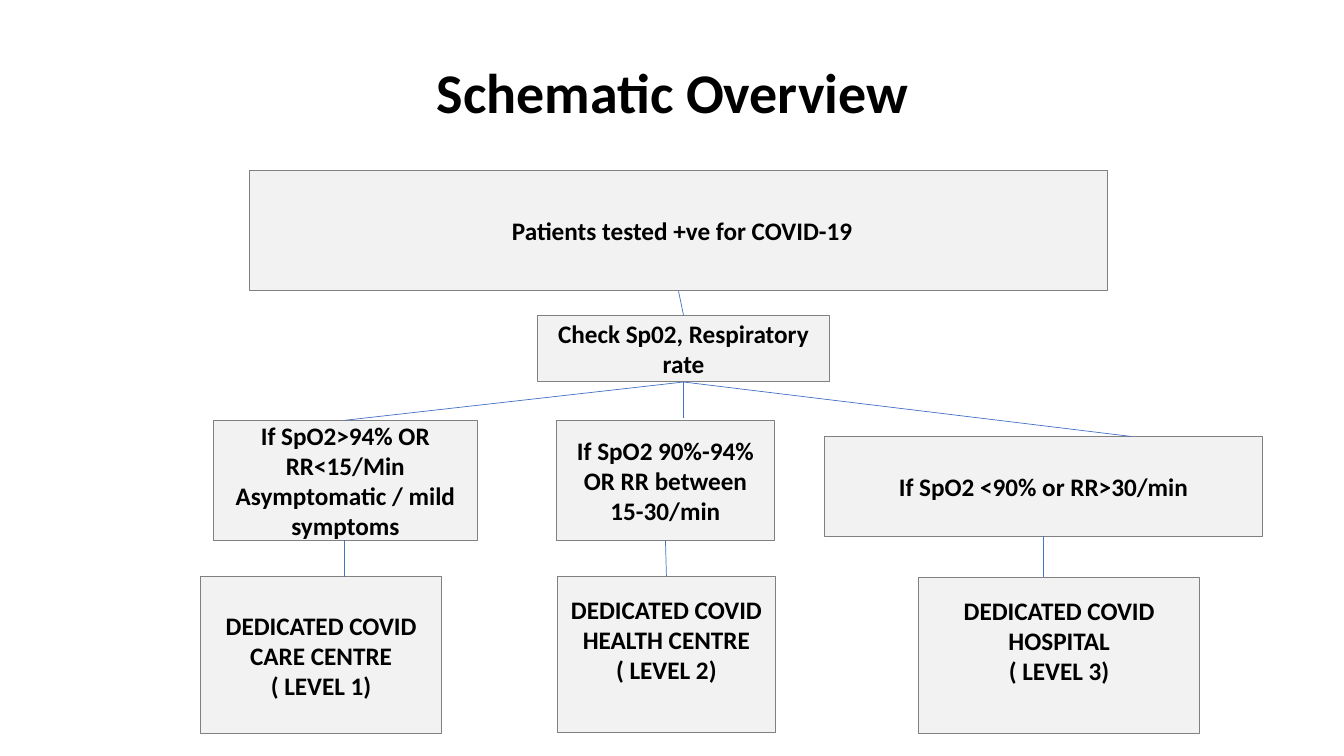
"""Build the patient triage overview slide."""
import pptx
import pptx.dml.color
import pptx.enum.shapes
import pptx.enum.text
import pptx.oxml.ns
import pptx.util
from lxml import etree

Inches = pptx.util.Inches


class TriageSlide:
    """Hold the style and current slide, and draw its elements."""

    colours = {"text": "000000", "box": "F2F2F2", "border": "808080", "link": "4472C4"}
    font = "Calibri"

    def __init__(self, deck):
        """Add a title-only slide to the deck."""
        self.page = deck.slides.add_slide(deck.slide_layouts[5])

    def colour(self, name):
        """Return the named colour."""
        return pptx.dml.color.RGBColor.from_string(self.colours[name])

    def label(self, frame, text, size):
        """Fill a text frame with bold, centred paragraphs."""
        frame.text = text
        frame.word_wrap = True
        for para in frame.paragraphs:
            para.alignment = pptx.enum.text.PP_ALIGN.CENTER
            for span in para.runs:
                span.font.name = self.font
                span.font.size = pptx.util.Pt(size)
                span.font.bold = True
                span.font.color.rgb = self.colour("text")

    def title(self, text, left, top, width, height):
        """Place and format the title placeholder."""
        box = self.page.shapes.title
        box.left, box.top = Inches(left), Inches(top)
        box.width, box.height = Inches(width), Inches(height)
        self.label(box.text_frame, text, 40)
        box.text_frame.vertical_anchor = pptx.enum.text.MSO_ANCHOR.BOTTOM
        box.text_frame.paragraphs[0].line_spacing = 0.9

    def process(self, text, left, top, width, height, bottom=0.05):
        """Add a flowchart box with its text."""
        box = self.page.shapes.add_shape(
            pptx.enum.shapes.MSO_SHAPE.FLOWCHART_PROCESS,
            Inches(left), Inches(top), Inches(width), Inches(height))
        box.shadow.inherit = False
        box.fill.solid()
        box.fill.fore_color.rgb = self.colour("box")
        box.line.color.rgb = self.colour("border")
        box.line.width = pptx.util.Pt(0.5)
        self.label(box.text_frame, text, 18)
        box.text_frame.vertical_anchor = pptx.enum.text.MSO_ANCHOR.MIDDLE
        box.text_frame.margin_bottom = Inches(bottom)
        return box

    def link(self, start, end):
        """Join two points with a thin line."""
        line = self.page.shapes.add_connector(
            pptx.enum.shapes.MSO_CONNECTOR.STRAIGHT,
            *(Inches(value) for value in (*start, *end)))
        line.line.color.rgb = self.colour("link")
        line.line.width = pptx.util.Pt(0.5)
        etree.SubElement(line._element.spPr, pptx.oxml.ns.qn("a:effectLst"))


def main():
    """Lay out the slide and save the deck."""
    deck = pptx.Presentation()
    deck.slide_width, deck.slide_height = Inches(13.33), Inches(7.5)
    slide = TriageSlide(deck)
    slide.title("Schematic Overview", 1.67, 0.22, 10, 1.08)

    patients = slide.process("Patients tested +ve for COVID-19", 2.47, 1.69, 8.51, 1.19)
    patients.text_frame.margin_left = Inches(0.18)
    slide.process("Check Sp02, Respiratory rate", 5.33, 3.13, 2.9, 0.65)

    criteria = [
        ("If SpO2>94% OR RR<15/Min\nAsymptomatic / mild symptoms", 2.12, 4.17, 2.61, 1.19),
        ("If SpO2 90%-94% OR RR between 15-30/min", 5.52, 4.17, 2.16, 1.19),
        ("If SpO2 <90% or RR>30/min", 8.18, 4.33, 4.34, 0.99),
    ]
    centres = [
        ("DEDICATED COVID CARE CENTRE\n( LEVEL 1)", 1.99, 5.72, 2.39, 1.56),
        ("DEDICATED COVID HEALTH CENTRE\n( LEVEL 2)", 5.53, 5.72, 2.16, 1.55, 0.35),
        ("DEDICATED COVID HOSPITAL\n( LEVEL 3)", 9.11, 5.73, 2.79, 1.55, 0.35),
    ]
    for box in criteria + centres:
        slide.process(*box)

    check = (6.78, 3.79)
    slide.link((6.73, 2.89), (6.78, 3.13))
    for end in [(3.42, 4.17), (6.78, 4.15), (11.22, 4.33)]:
        slide.link(check, end)
    for start, end in [((3.42, 5.36), (3.42, 5.72)),
                       ((6.6, 5.36), (6.61, 5.72)),
                       ((10.35, 5.32), (10.35, 5.72))]:
        slide.link(start, end)

    deck.save("out.pptx")


if __name__ == "__main__":
    main()
